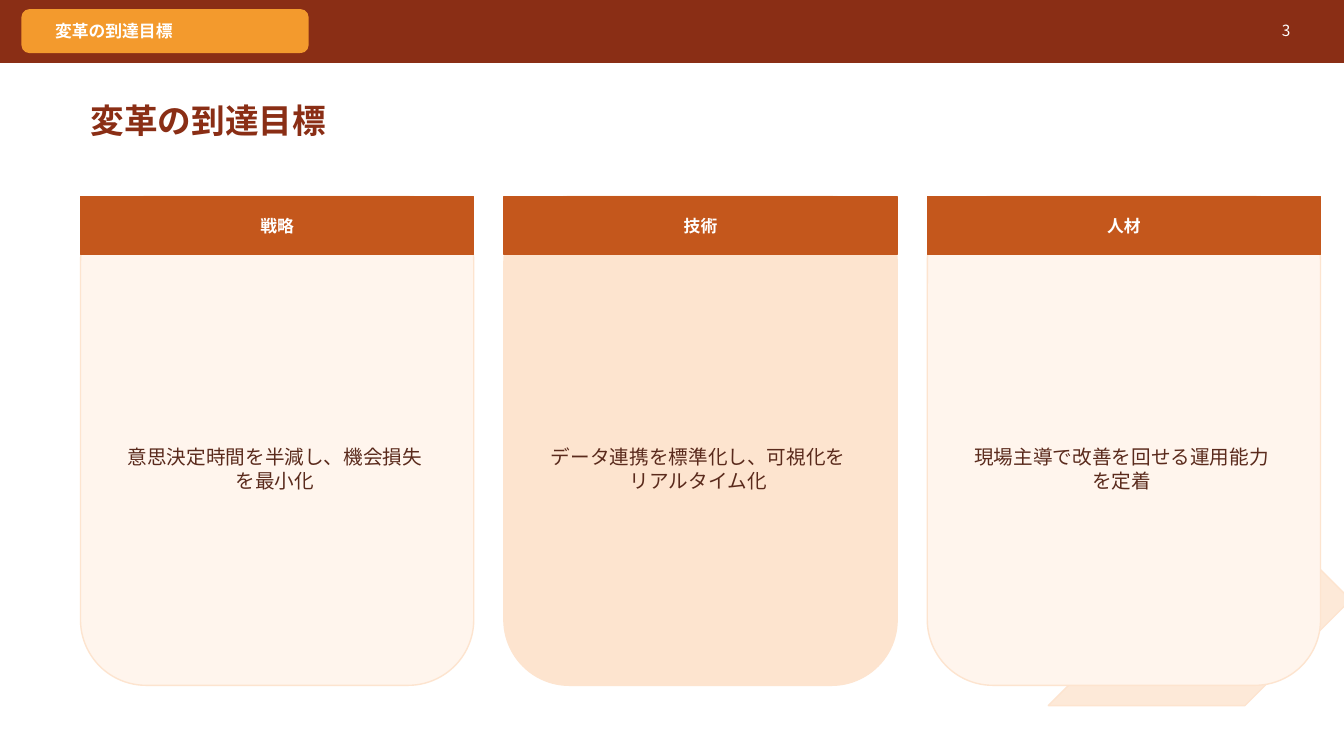
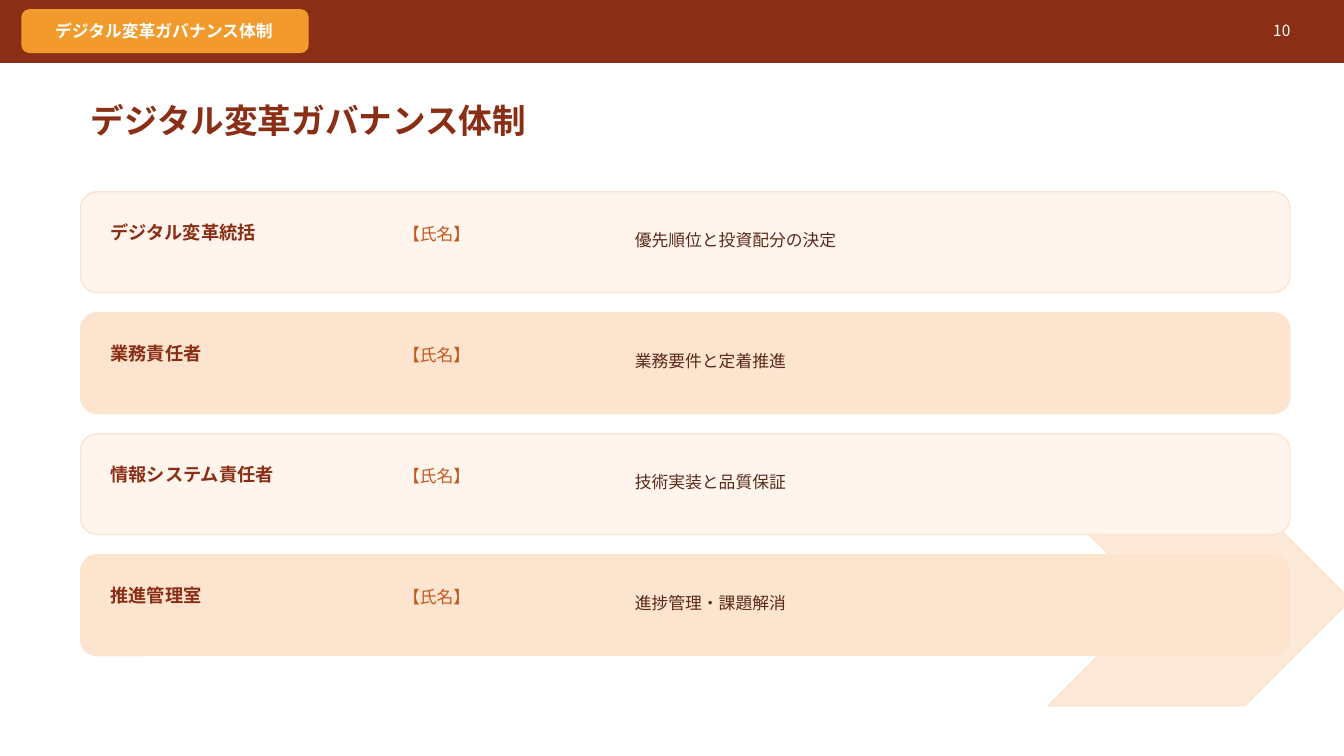
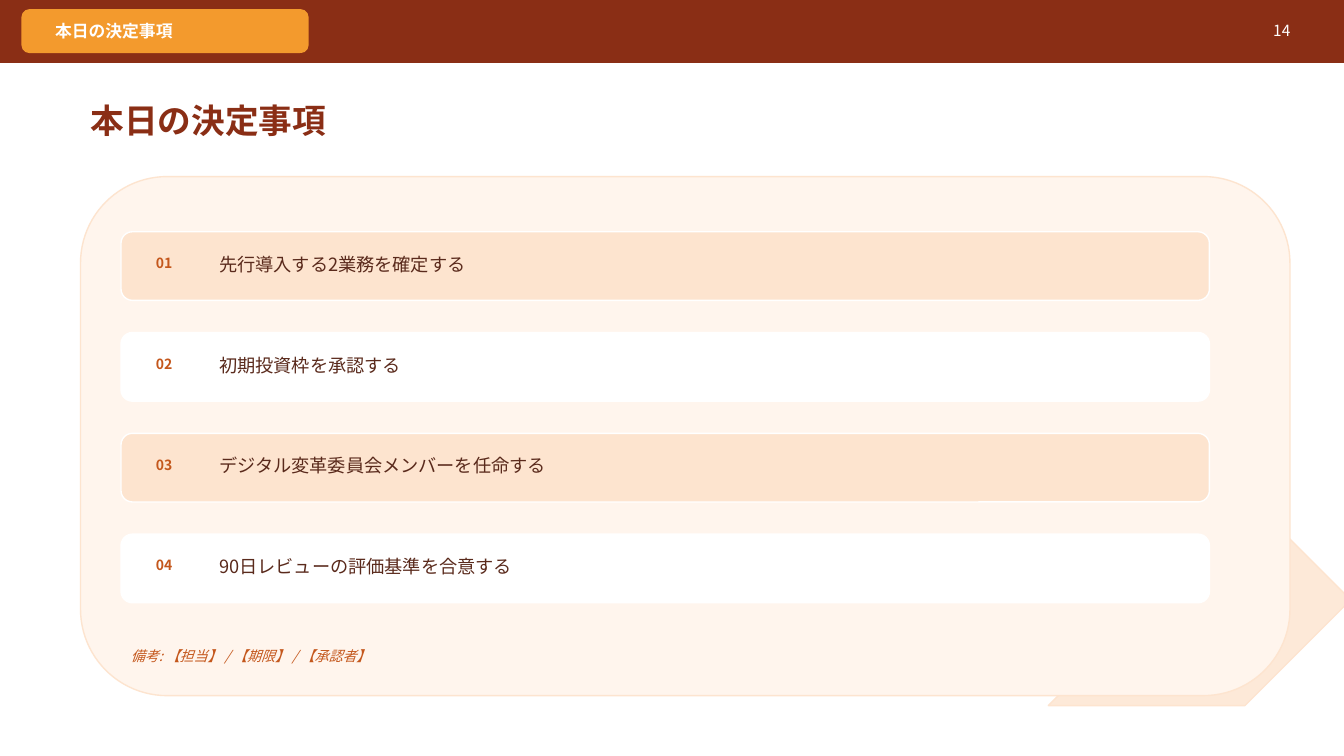
"""Builds three slides of a digital transformation proposal."""
import pptx
import pptx.dml.color
import pptx.enum.lang
import pptx.enum.shapes
import pptx.enum.text
import pptx.oxml
import pptx.oxml.ns
import pptx.util
import lxml.etree

COLORS = {
    "brown": "8A2E15",
    "rust": "C4571C",
    "orange": "F39A2D",
    "peach": "FDE4CF",
    "cream": "FFF5ED",
    "text": "5A2A1C",
    "white": "FFFFFF",
}
JAPANESE_FONT = "Noto Sans CJK JP"
TITLE_FONT = "Cabin"
Cm = pptx.util.Cm
SHAPES = pptx.enum.shapes.MSO_SHAPE
ALIGN = pptx.enum.text.PP_ALIGN


def add_block(slide, kind, box, fill, line=None):
    """Add a filled preset shape; box is left, top, width, height in cm."""
    shape = slide.shapes.add_shape(kind, *[Cm(length) for length in box])
    shape.shadow.inherit = False
    shape.fill.solid()
    shape.fill.fore_color.rgb = pptx.dml.color.RGBColor.from_string(COLORS[fill])
    shape.line.color.rgb = pptx.dml.color.RGBColor.from_string(COLORS[line or fill])
    shape.line.width = pptx.util.Pt(1)
    return shape


def add_text(slide, text, box, size=12, color="text", bold=False, italic=False,
             align=ALIGN.LEFT, font=JAPANESE_FONT, placeholder=None):
    """Write text in a new text box, or in the given placeholder moved to box."""
    lengths = [Cm(length) for length in box]
    shape = placeholder or slide.shapes.add_textbox(*lengths)
    shape.left, shape.top, shape.width, shape.height = lengths
    frame = shape.text_frame
    frame.word_wrap = True
    frame.auto_size = pptx.enum.text.MSO_AUTO_SIZE.NONE
    frame.vertical_anchor = pptx.enum.text.MSO_ANCHOR.MIDDLE
    paragraph = frame.paragraphs[0]
    paragraph.alignment = align
    run = paragraph.add_run()
    run.text = text
    run.font.name = font
    run.font.size = pptx.util.Pt(size)
    run.font.bold = bold
    run.font.italic = italic
    run.font.language_id = pptx.enum.lang.MSO_LANGUAGE_ID.JAPANESE
    run.font.color.rgb = pptx.dml.color.RGBColor.from_string(COLORS[color])
    east_asian = lxml.etree.SubElement(run.font._element, pptx.oxml.ns.qn("a:ea"))
    east_asian.set("typeface", JAPANESE_FONT)


presentation = pptx.Presentation()
presentation.slide_width = Cm(33.87)
presentation.slide_height = Cm(19.05)

slides = []
for title, number in [("変革の到達目標", "3"), ("デジタル変革ガバナンス体制", "10"), ("本日の決定事項", "14")]:
    slide = presentation.slides.add_slide(presentation.slide_layouts[5])
    chevron = add_block(slide, SHAPES.CHEVRON, (26.42, 12.45, 7.62, 5.33), "peach")
    fill_color = chevron.fill._xPr.find(".//" + pptx.oxml.ns.qn("a:srgbClr"))
    lxml.etree.SubElement(fill_color, pptx.oxml.ns.qn("a:alpha")).set("val", "80000")
    add_block(slide, SHAPES.RECTANGLE, (0, 0, 33.87, 1.57), "brown")
    add_block(slide, SHAPES.ROUNDED_RECTANGLE, (0.56, 0.25, 7.2, 1.07), "orange")
    add_text(slide, title, (1.14, 0.46, 6.5, 0.61), color="white", bold=True)
    add_text(slide, number, (30.86, 0.46, 1.91, 0.61), size=11, color="white", align=ALIGN.RIGHT)
    add_text(slide, title, (2.03, 2.41, 28.96, 1.22), size=24, color="brown", bold=True,
             font=TITLE_FONT, placeholder=slide.shapes.title)
    slides.append(slide)
goals_slide, governance_slide, decisions_slide = slides

goals = [
    ("戦略", "意思決定時間を半減し、機会損失を最小化"),
    ("技術", "データ連携を標準化し、可視化をリアルタイム化"),
    ("人材", "現場主導で改善を回せる運用能力を定着"),
]
for index, (heading, goal) in enumerate(goals):
    left = 2.03 + index * 10.67
    fill = ("cream", "peach")[index % 2]
    add_block(goals_slide, SHAPES.ROUNDED_RECTANGLE, (left, 4.95, 9.91, 12.32), fill, "peach")
    add_block(goals_slide, SHAPES.RECTANGLE, (left, 4.95, 9.91, 1.47), "rust")
    add_text(goals_slide, heading, (left + 0.51, 5.38, 8.89, 0.61), color="white", bold=True,
             align=ALIGN.CENTER)
    add_text(goals_slide, goal, (left + 0.71, 7.37, 8.38, 8.89), size=14, align=ALIGN.CENTER)

roles = [
    ("デジタル変革統括", "優先順位と投資配分の決定"),
    ("業務責任者", "業務要件と定着推進"),
    ("情報システム責任者", "技術実装と品質保証"),
    ("推進管理室", "進捗管理・課題解消"),
]
for index, (role, duty) in enumerate(roles):
    top = 4.83 + index * 3.05
    fill = ("cream", "peach")[index % 2]
    add_block(governance_slide, SHAPES.ROUNDED_RECTANGLE, (2.03, top, 30.48, 2.54), fill, "peach")
    add_text(governance_slide, role, (2.54, top + 0.71, 6.86, 0.61), size=13, color="brown", bold=True)
    add_text(governance_slide, "【氏名】", (9.91, top + 0.76, 5.33, 0.61), color="rust")
    add_text(governance_slide, duty, (15.75, top + 0.64, 15.75, 1.14))

decisions = [
    "先行導入する2業務を確定する",
    "初期投資枠を承認する",
    "デジタル変革委員会メンバーを任命する",
    "90日レビューの評価基準を合意する",
]
add_block(decisions_slide, SHAPES.ROUNDED_RECTANGLE, (2.03, 4.45, 30.48, 13.08), "cream", "peach")
for index, decision in enumerate(decisions):
    top = 5.84 + index * 2.54
    fill = ("peach", "white")[index % 2]
    add_block(decisions_slide, SHAPES.ROUNDED_RECTANGLE, (3.05, top, 27.43, 1.73), fill, "white")
    add_text(decisions_slide, f"{index + 1:02}", (3.68, top + 0.53, 1.12, 0.51), size=10,
             color="rust", bold=True)
    add_text(decisions_slide, decision, (5.28, top + 0.51, 24.38, 0.61), size=13)
add_text(decisions_slide, "備考: 【担当】 / 【期限】 / 【承認者】", (3.05, 16.26, 17.27, 0.56), size=10,
         color="rust", italic=True)

presentation.save("out.pptx")
